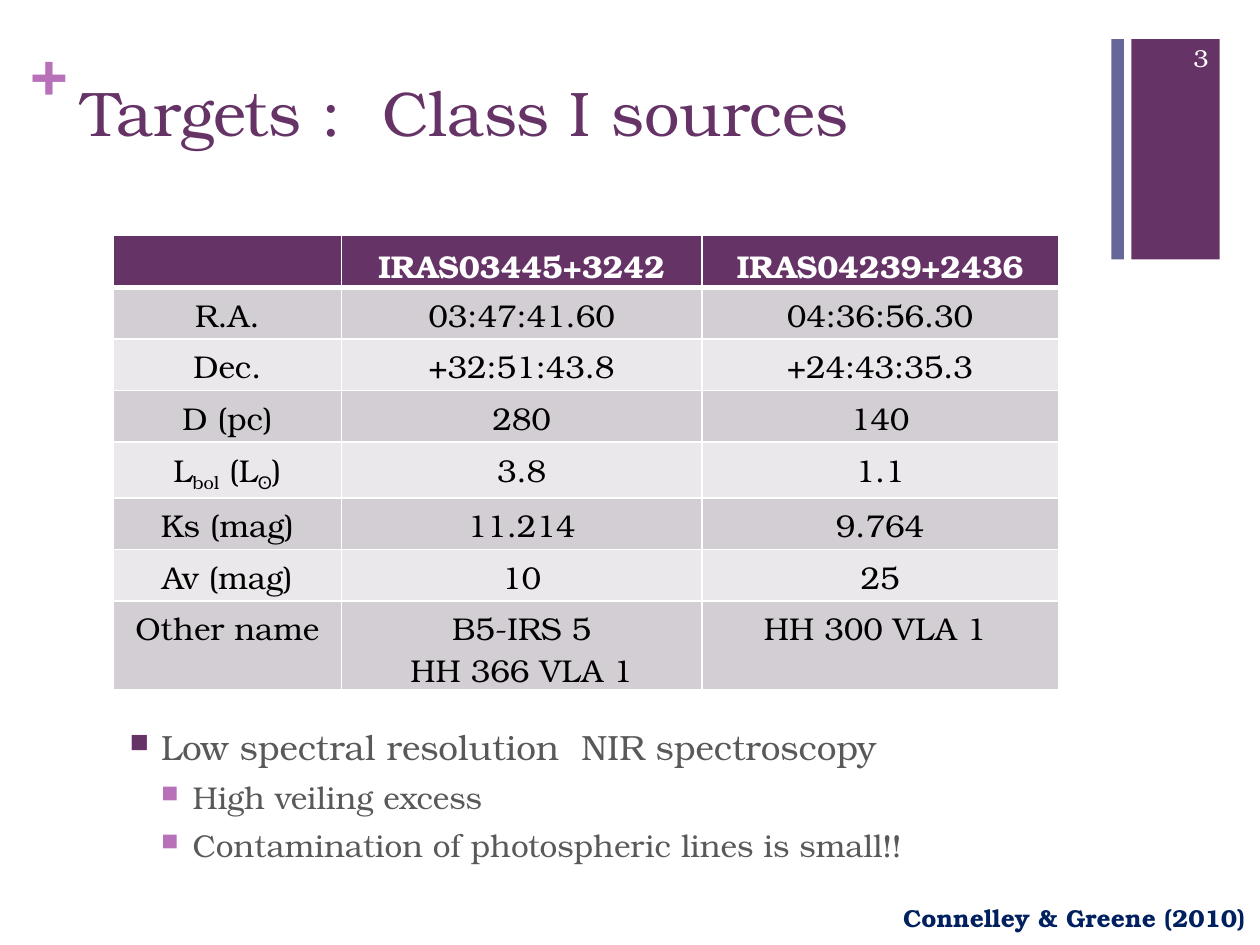
from dataclasses import dataclass

from lxml import etree
from pptx import Presentation
from pptx.dml.color import RGBColor
from pptx.enum import shapes, text
from pptx.oxml import ns
from pptx.util import Inches, Pt


@dataclass(frozen=True)
class Theme:
    font: str = "TeX Gyre Bonum"
    symbol_font: str = "Arial"
    plum: str = "663366"
    orchid: str = "B870B8"
    slate: str = "666699"
    navy: str = "002060"
    grey: str = "595959"
    black: str = "000000"
    white: str = "FFFFFF"
    bands: tuple = ("D3CED3", "EAE8EA")
    title_size: int = 36
    lead_size: int = 20
    text_size: int = 18
    small_size: int = 14


def add_xml(parent, tag, **attributes):
    return etree.SubElement(parent, ns.qn(tag), **attributes)


class SlideBuilder:
    def __init__(self, slide, theme):
        self.slide = slide
        self.theme = theme

    def style(self, paragraph, size, color, bold=False, align=text.PP_ALIGN.LEFT):
        paragraph.alignment = align
        for run in paragraph.runs:
            run.font.name = self.theme.font
            run.font.size = Pt(size)
            run.font.bold = bold
            run.font.color.rgb = RGBColor.from_string(color)

    def title(self, wording, box):
        heading = self.slide.shapes.title
        heading.left, heading.top, heading.width, heading.height = map(Inches, box)
        frame = heading.text_frame
        frame.text = wording
        frame.auto_size = text.MSO_AUTO_SIZE.NONE
        frame.vertical_anchor = text.MSO_ANCHOR.TOP
        self.style(frame.paragraphs[0], self.theme.title_size, self.theme.plum)

    def bar(self, box, color):
        bar = self.slide.shapes.add_shape(
            shapes.MSO_SHAPE.RECTANGLE, *map(Inches, box))
        bar.shadow.inherit = False
        bar.fill.solid()
        bar.fill.fore_color.rgb = RGBColor.from_string(color)
        bar.line.fill.background()

    def label(self, wording, box, size, color, inset=True,
              anchor=text.MSO_ANCHOR.TOP, **style):
        frame = self.slide.shapes.add_textbox(*map(Inches, box)).text_frame
        frame.word_wrap = True
        frame.vertical_anchor = anchor
        if not inset:
            frame.margin_left = frame.margin_right = 0
            frame.margin_top = frame.margin_bottom = 0
        frame.text = wording
        self.style(frame.paragraphs[0], size, color, **style)

    def bullets(self, points, box):
        frame = self.slide.shapes.add_textbox(*map(Inches, box)).text_frame
        frame.word_wrap = True
        frame.text = "\n".join(wording for _, wording in points)
        # Size, space before and bullet colour for each level
        levels = ((self.theme.lead_size, 20, self.theme.plum),
                  (self.theme.text_size, 6, self.theme.orchid))
        for paragraph, (level, _) in zip(frame.paragraphs, points):
            size, space, bullet_color = levels[level]
            self.style(paragraph, size, self.theme.grey)
            paragraph.level = level
            paragraph.space_before = Pt(space)
            props = paragraph._p.get_or_add_pPr()
            props.set("marL", str(Inches(0.25 * (level + 1))))
            props.set("indent", str(Inches(-0.25)))
            add_xml(add_xml(props, "a:buClr"), "a:srgbClr", val=bullet_color)
            add_xml(props, "a:buSzPct", val="75000")
            add_xml(props, "a:buChar", char="■")

    def borders(self, cell, **widths):
        props = cell._tc.get_or_add_tcPr()
        for side in "LRTB":
            line = add_xml(props, f"a:ln{side}", w=str(Pt(widths.get(side, 1))))
            add_xml(add_xml(line, "a:solidFill"), "a:srgbClr", val=self.theme.white)

    def cell_text(self, cell, wording, color, bold):
        """Underscores enclose a subscript; a line break starts a paragraph."""
        cell.text = wording
        for paragraph in cell.text_frame.paragraphs:
            parts = paragraph.text.split("_")
            paragraph.text = parts[0]
            for part in parts[1:]:
                paragraph.add_run().text = part
            self.style(paragraph, self.theme.text_size, color, bold,
                       text.PP_ALIGN.CENTER)
            for subscript in paragraph.runs[1::2]:
                subscript.font._element.set("baseline", "-25000")
                if subscript.text == "ʘ":
                    subscript.font.name = self.theme.symbol_font

    def table(self, rows, left, top, widths, row_height):
        grid = self.slide.shapes.add_table(
            len(rows), len(widths), Inches(left), Inches(top),
            Inches(sum(widths)), Inches(row_height * len(rows))).table
        for column, width in zip(grid.columns, widths):
            column.width = Inches(width)
        for r, row in enumerate(rows):
            grid.rows[r].height = Inches(row_height)
            header = r == 0
            fill = self.theme.plum if header else self.theme.bands[(r - 1) % 2]
            color = self.theme.white if header else self.theme.black
            for c, wording in enumerate(row):
                cell = grid.cell(r, c)
                self.cell_text(cell, wording, color, header)
                self.borders(cell, B=3 if header else 1, T=3 if r == 1 else 1)
                cell.fill.solid()
                cell.fill.fore_color.rgb = RGBColor.from_string(fill)


TARGETS = (
    ("", "IRAS03445+3242", "IRAS04239+2436"),
    ("R.A.", "03:47:41.60", "04:36:56.30"),
    ("Dec.", "+32:51:43.8", "+24:43:35.3"),
    ("D (pc)", "280", "140"),
    ("L_bol_ (L_ʘ_)", "3.8", "1.1"),
    ("Ks (mag)", "11.214", "9.764"),
    ("Av (mag)", "10", "25"),
    ("Other name", "B5-IRS 5\nHH 366 VLA 1", "HH 300 VLA 1 "),
)
FINDINGS = (
    (0, "Low spectral resolution  NIR spectroscopy"),
    (1, "High veiling excess"),
    (1, "Contamination of photospheric lines is small!!"),
)


def main():
    deck = Presentation()
    deck.slide_width, deck.slide_height = Inches(10), Inches(7.5)
    theme = Theme()
    page = SlideBuilder(deck.slides.add_slide(deck.slide_layouts[5]), theme)

    # Corner decoration
    page.bar((8.98, 0.31, 0.7, 1.75), theme.plum)
    page.label("+", (0.24, 0.25, 0.29, 0.61), theme.title_size, theme.orchid,
               inset=False, bold=True)
    page.bar((8.82, 0.31, 0.1, 1.75), theme.slate)

    # Heading, findings and page number
    page.title("Targets :  Class I sources", (0.55, 0.53, 8.26, 1.22))
    page.bullets(FINDINGS, (0.93, 5.71, 7.31, 1.54))
    page.label("3", (9.08, 0.26, 0.61, 0.4), theme.small_size, theme.white,
               anchor=text.MSO_ANCHOR.MIDDLE, align=text.PP_ALIGN.RIGHT)

    # Target properties and their reference
    page.table(TARGETS, 0.9, 1.87, (1.81, 2.86, 2.83), 0.41)
    page.label("Connelley & Greene (2010)", (7.07, 7.12, 2.93, 0.34),
               theme.small_size, theme.navy, bold=True)

    deck.save("out.pptx")


if __name__ == "__main__":
    main()
